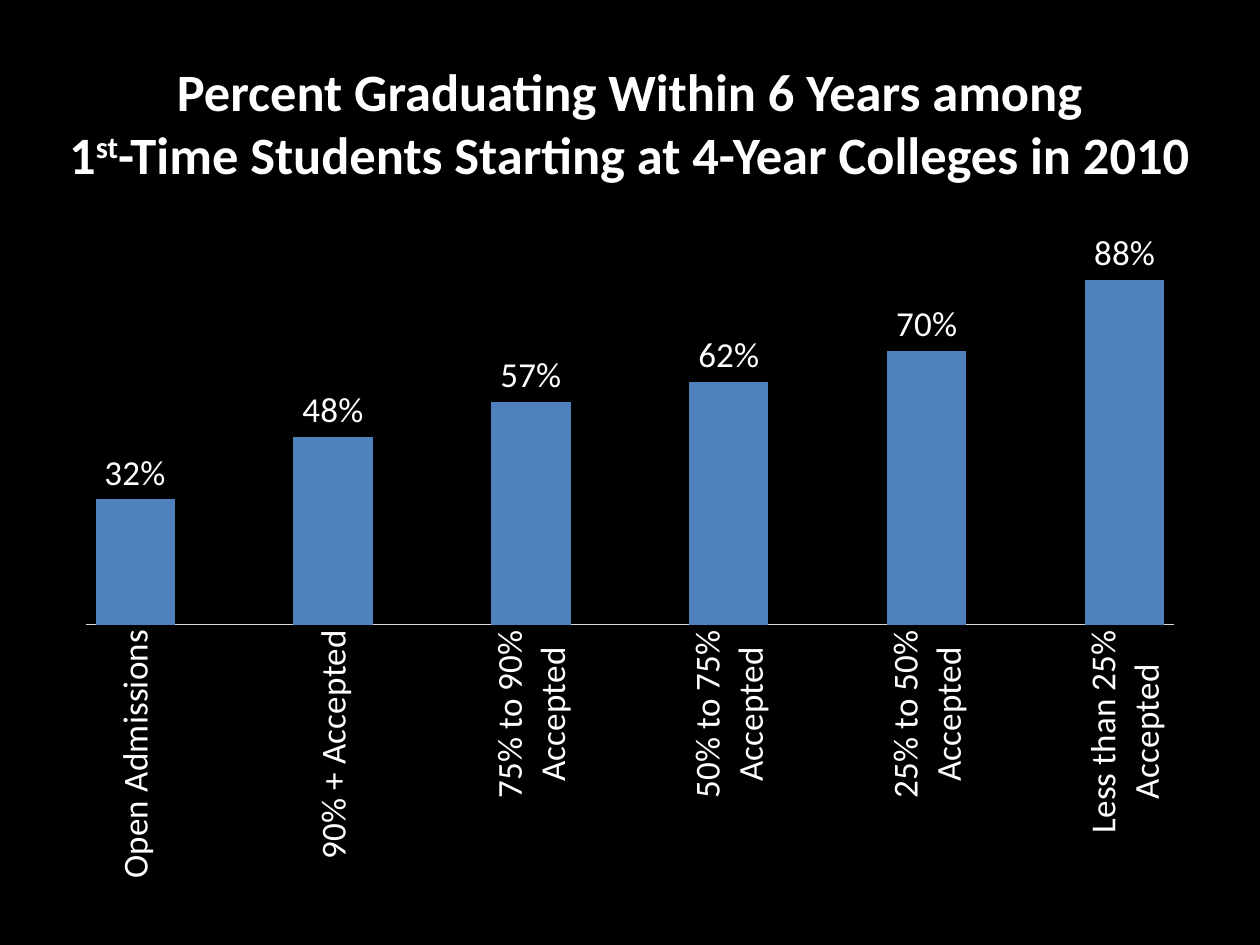
"""Build a slide charting college graduation rates by admission selectivity."""
from dataclasses import dataclass

from lxml.etree import fromstring
from pptx import Presentation
from pptx.chart.data import CategoryChartData
from pptx.dml.color import RGBColor
from pptx.enum.chart import XL_CHART_TYPE, XL_LABEL_POSITION, XL_TICK_MARK
from pptx.enum.text import MSO_ANCHOR, PP_ALIGN
from pptx.util import Inches, Pt

FONT = "Calibri"
WHITE = "FFFFFF"
CHART_WIDTH, CHART_HEIGHT = 9, 5.33
PLOT_LAYOUT = {
    "x": 0.18 / CHART_WIDTH,
    "y": 0.1 / CHART_HEIGHT,
    "w": 8.64 / CHART_WIDTH,
    "h": 3.11 / CHART_HEIGHT,
}
CHART_NAMESPACE = "http://schemas.openxmlformats.org/drawingml/2006/chart"


@dataclass
class GraduationRate:
    admissions: str
    share: float


@dataclass
class TitleRun:
    text: str
    superscript: bool = False


RATES = [
    GraduationRate("Open Admissions", 0.32),
    GraduationRate("90% + Accepted", 0.48),
    GraduationRate("75% to 90%\nAccepted", 0.57),
    GraduationRate("50% to 75%\nAccepted", 0.62),
    GraduationRate("25% to 50%\nAccepted", 0.70),
    GraduationRate("Less than 25%\nAccepted", 0.88),
]
TITLE_LINES = [
    [TitleRun("Percent Graduating Within 6 Years among")],
    [
        TitleRun("1"),
        TitleRun("st", superscript=True),
        TitleRun("-Time Students Starting at 4-Year Colleges in 2010"),
    ],
]


def color(value: str) -> RGBColor:
    return RGBColor.from_string(value)


def style_font(font, size: float, bold: bool = False) -> None:
    font.name = FONT
    font.size = Pt(size)
    font.bold = bold
    font.color.rgb = color(WHITE)


def fill_title(title, lines: list[list[TitleRun]]) -> None:
    title.left, title.top = Inches(0.37), Inches(0.41)
    title.width, title.height = Inches(9.26), Inches(1.11)
    text_frame = title.text_frame
    text_frame.word_wrap = False
    text_frame.vertical_anchor = MSO_ANCHOR.MIDDLE
    text_frame.text = "\n".join("" for _ in lines)
    for paragraph, line in zip(text_frame.paragraphs, lines):
        paragraph.alignment = PP_ALIGN.CENTER
        for part in line:
            run = paragraph.add_run()
            run.text = part.text
            style_font(run.font, 30, bold=True)
            if part.superscript:
                run._r.get_or_add_rPr().set("baseline", "30000")


def spaced_chart_data(rates: list[GraduationRate]) -> CategoryChartData:
    chart_data = CategoryChartData(number_format="0%")
    shares = []
    for index, rate in enumerate(rates):
        if index:
            chart_data.add_category("")
            shares.append(None)
        chart_data.add_category(rate.admissions)
        shares.append(rate.share)
    chart_data.add_series("Series 1", shares)
    return chart_data


def set_plot_layout(chart, layout: dict[str, float]) -> None:
    plot_area = chart._chartSpace.chart.plotArea
    for existing in plot_area.findall(f"{{{CHART_NAMESPACE}}}layout"):
        plot_area.remove(existing)
    sizes = "".join(f'<c:{key} val="{value}"/>' for key, value in layout.items())
    plot_area.insert(0, fromstring(
        f'<c:layout xmlns:c="{CHART_NAMESPACE}"><c:manualLayout>'
        '<c:layoutTarget val="inner"/><c:xMode val="edge"/><c:yMode val="edge"/>'
        f"{sizes}</c:manualLayout></c:layout>"
    ))


def add_rate_chart(slide, rates: list[GraduationRate]) -> None:
    chart = slide.shapes.add_chart(
        XL_CHART_TYPE.COLUMN_CLUSTERED,
        Inches(0.5), Inches(1.75), Inches(CHART_WIDTH), Inches(CHART_HEIGHT),
        spaced_chart_data(rates),
    ).chart
    chart.has_legend = False
    chart.has_title = False
    chart.font.name = FONT
    chart.font.size = Pt(10)
    set_plot_layout(chart, PLOT_LAYOUT)

    value_axis = chart.value_axis
    value_axis.minimum_scale, value_axis.maximum_scale = 0, 1
    value_axis.has_major_gridlines = False
    value_axis.tick_labels.number_format = "0%"
    value_axis.tick_labels.number_format_is_linked = False
    value_axis.visible = False

    category_axis = chart.category_axis
    category_axis.major_tick_mark = XL_TICK_MARK.NONE
    category_axis.format.line.color.rgb = color("D9D9D9")
    category_axis.format.line.width = Pt(0.75)
    style_font(category_axis.tick_labels.font, 20)
    category_axis._element.txPr.bodyPr.set("rot", "-5400000")
    category_axis._element.txPr.bodyPr.set("vert", "horz")

    plot = chart.plots[0]
    plot.gap_width = 25
    plot.overlap = -27
    plot.vary_by_categories = False
    series = plot.series[0]
    series.format.fill.solid()
    series.format.fill.fore_color.rgb = color("4F81BD")
    labels = series.data_labels
    labels.show_value = True
    labels.position = XL_LABEL_POSITION.OUTSIDE_END
    labels.number_format = "0%"
    labels.number_format_is_linked = False
    style_font(labels.font, 20)


def main() -> None:
    presentation = Presentation()
    presentation.slide_width, presentation.slide_height = Inches(10), Inches(7.5)
    slide = presentation.slides.add_slide(presentation.slide_layouts[5])
    slide.background.fill.solid()
    slide.background.fill.fore_color.rgb = color("000000")
    add_rate_chart(slide, RATES)
    fill_title(slide.shapes.title, TITLE_LINES)
    presentation.save("out.pptx")


if __name__ == "__main__":
    main()
